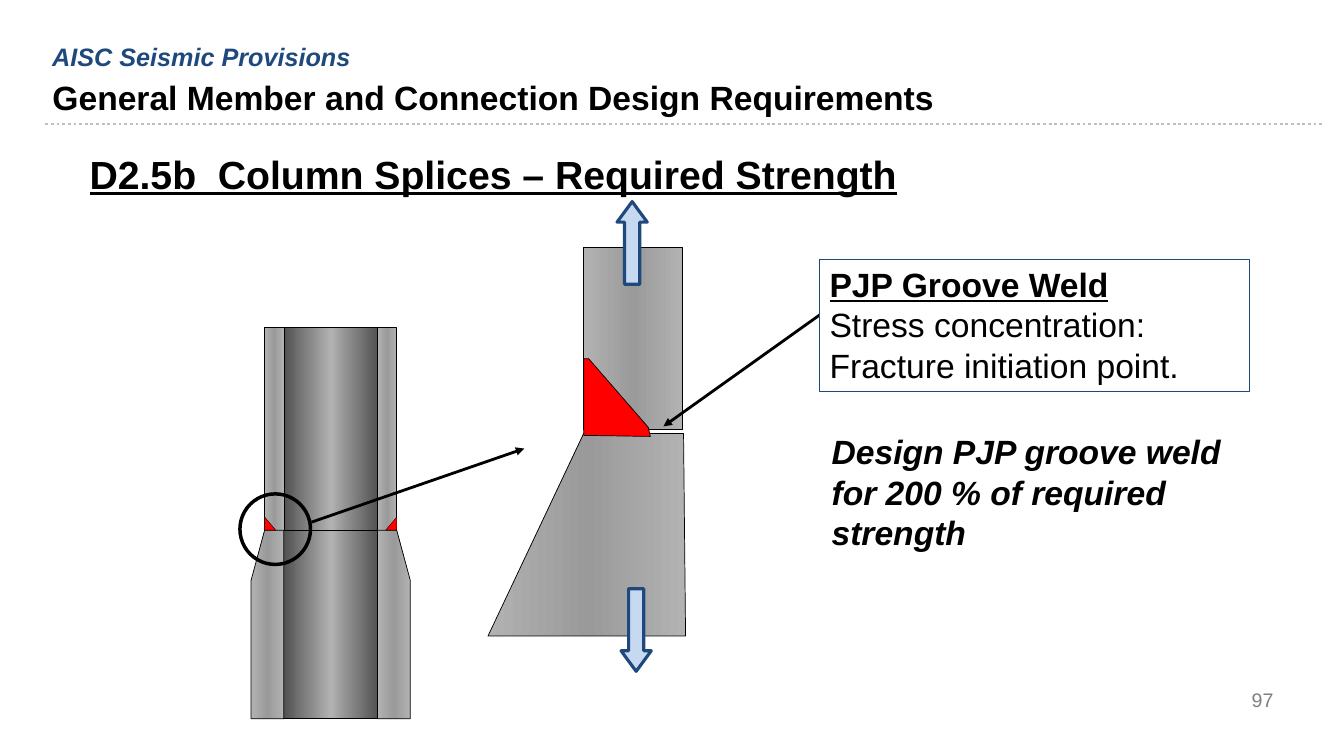
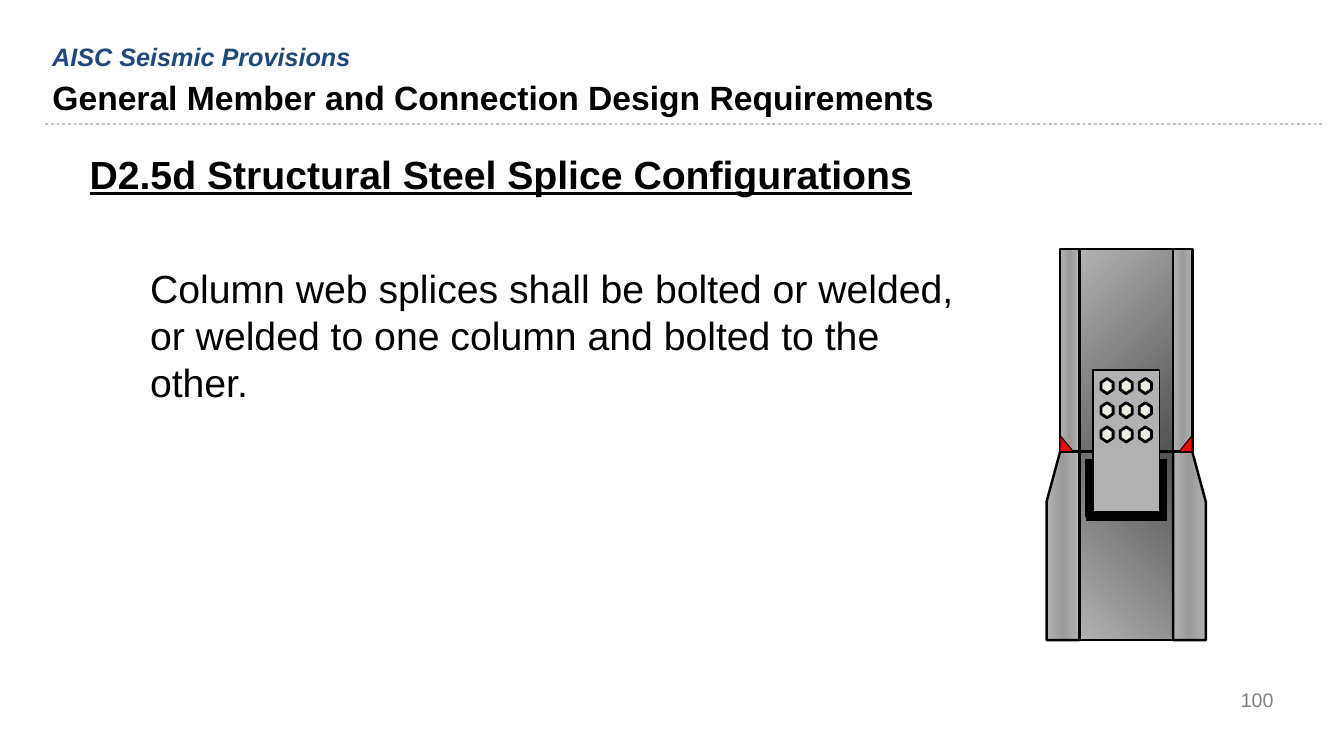
from lxml import etree
from pptx import Presentation
from pptx.dml.color import RGBColor
from pptx.enum.dml import MSO_LINE
from pptx.enum.shapes import MSO_CONNECTOR, MSO_SHAPE
from pptx.enum.text import MSO_ANCHOR, MSO_AUTO_SIZE, PP_ALIGN
from pptx.oxml.ns import qn
from pptx.util import Inches, Pt

# Theme: colours, gradients and type styles
THEME = {
    "font": "Arial",
    "black": "000000", "navy": "1F497D", "sky": "C6D9F1", "white": "FFFFFF",
    "rule": "BFBFBF", "weld": "FF0000", "plate": "B2B2B2", "bolt": "EEECE1",
    "flange": ["B2B2B2", "9A9A9A", "B2B2B2"],
    "web": ["525252", "B2B2B2", "525252"],
    "web_slant": ["B2B2B2", "525252"],
    "text": {
        "title": ("000000", {"size": Pt(24), "bold": True}),
        "kicker": ("1F497D", {"size": Pt(18), "bold": True, "italic": True}),
        "number": ("7F7F7F", {"size": Pt(14)}),
        "heading": ("000000", {"size": Pt(28), "bold": True, "underline": True}),
        "body": ("000000", {"size": Pt(28)}),
        "label": ("000000", {"size": Pt(24), "bold": True, "underline": True}),
        "note": ("000000", {"size": Pt(24)}),
        "rule": ("000000", {"size": Pt(24), "bold": True, "italic": True}),
    },
}

prs = Presentation()
prs.slide_width, prs.slide_height = Inches(13.33), Inches(7.5)
CELL = prs.slide_height / 75  # the grid has 75 rows of square cells


def write(tf, lines, align=PP_ALIGN.LEFT, anchor=MSO_ANCHOR.TOP):
    """Fill a text frame with (text, style name) paragraphs."""
    tf.word_wrap, tf.auto_size = True, MSO_AUTO_SIZE.NONE
    tf.vertical_anchor = anchor
    for i, (text, style) in enumerate(lines):
        p = tf.paragraphs[0] if i == 0 else tf.add_paragraph()
        p.alignment = align
        r = p.add_run()
        r.text = text
        color, formats = THEME["text"][style]
        r.font.name = THEME["font"]
        r.font.color.rgb = RGBColor.from_string(color)
        for name, value in formats.items():
            setattr(r.font, name, value)


def draw(s, form, at, fill=None, line="black", width=0.5, angle=0):
    """Draw a preset at (left, top, width, height), or a line or polygon through points."""
    if form == "polygon":
        points = [(round(x * CELL), round(y * CELL)) for x, y in at]
        builder = s.shapes.build_freeform(*points[0])
        builder.add_line_segments(points[1:], close=True)
        sp = builder.convert_to_shape()
    elif form == "line":
        ends = [round(v * CELL) for point in at for v in point]
        sp = s.shapes.add_connector(MSO_CONNECTOR.STRAIGHT, *ends)
    else:
        sp = s.shapes.add_shape(form, *[round(v * CELL) for v in at])
    sp.line.color.rgb = RGBColor.from_string(THEME[line])
    sp.line.width = Pt(width)
    if form == "line":
        etree.SubElement(sp._element.spPr, qn("a:effectLst"))
        return sp
    sp.shadow.inherit = False
    if fill is None:
        sp.fill.background()
    elif isinstance(THEME[fill], str):
        sp.fill.solid()
        sp.fill.fore_color.rgb = RGBColor.from_string(THEME[fill])
    else:
        colors = THEME[fill]
        sp.fill.gradient()
        sp.fill.gradient_angle = angle
        stops = sp._element.spPr.find(qn("a:gradFill")).find(qn("a:gsLst"))
        for stop in list(stops):
            stops.remove(stop)
        for i, color in enumerate(colors):
            stop = etree.SubElement(stops, qn("a:gs"), pos=str(100000 * i // (len(colors) - 1)))
            etree.SubElement(stop, qn("a:srgbClr"), val=color)
    return sp


# What differs between the slides; angles run counterclockwise
PAGES = [
    {"number": "97", "heading": "D2.5b  Column Splices – Required Strength",
     "axis": 32.8, "joint": 52.6, "web": "web", "angles": (0, 0),
     "outline": 0.5, "weld": (1.1, 1.3), "weld_line": 0.25},
    {"number": "100", "heading": "D2.5d Structural Steel Splice Configurations",
     "axis": 111.7, "joint": 44.8, "web": "web_slant", "angles": (315, 45),
     "outline": 1.75, "weld": (1.3, 1.6), "weld_line": 0.75},
]

# Column profile in cells: half widths from the axis, heights from the joint
WEB, UPPER, LOWER = 4.65, 6.55, 7.9
RISE, TAPER, DROP = 20.1, 5, 18.7

slides = []
for page in PAGES:
    s = prs.slides.add_slide(prs.slide_layouts[5])
    slides.append(s)

    # Title, dotted rule, and the text that frames every slide
    title = s.shapes.title
    title.left, title.top, title.width, title.height = [
        round(v * CELL) for v in (4.2, 7.1, 119.7, 4.4)]
    write(title.text_frame, [("General Member and Connection Design Requirements", "title")])
    rule = draw(s, "line", [(4.5, 12.3), (131.2, 12.3)], line="rule", width=2)
    rule.line.dash_style = MSO_LINE.ROUND_DOT
    frame_texts = [
        ((4.2, 3.6, 119.7, 3.1), "AISC Seismic Provisions", "kicker", PP_ALIGN.LEFT, MSO_ANCHOR.TOP),
        ((7.9, 14.4, 92.7, 5.7), page["heading"], "heading", PP_ALIGN.LEFT, MSO_ANCHOR.TOP),
        ((96.2, 67.4, 31.1, 4), page["number"], "number", PP_ALIGN.RIGHT, MSO_ANCHOR.MIDDLE),
    ]
    for at, text, style, align, anchor in frame_texts:
        box = s.shapes.add_textbox(*[round(v * CELL) for v in at])
        write(box.text_frame, [(text, style)], align, anchor)

    # Column: webs, then flanges and welds mirrored about the axis
    axis, joint, outline = page["axis"], page["joint"], page["outline"]
    for top, height, angle in zip((joint - RISE, joint), (RISE, DROP), page["angles"]):
        draw(s, MSO_SHAPE.RECTANGLE, (axis - WEB, top, 2 * WEB, height),
             page["web"], width=outline, angle=angle)
    weld_width, weld_height = page["weld"]
    upper_flange = [(WEB, -RISE), (UPPER, -RISE), (UPPER, 0), (WEB, 0)]
    lower_flange = [(WEB, 0), (UPPER, 0), (LOWER, TAPER), (LOWER, DROP), (WEB, DROP)]
    weld = [(UPPER, -weld_height), (UPPER - weld_width, 0), (UPPER, 0)]
    for side in (-1, 1):
        for part, fill, width in [(upper_flange, "flange", outline),
                                  (lower_flange, "flange", outline),
                                  (weld, "weld", page["weld_line"])]:
            draw(s, "polygon", [(axis + side * x, joint + y) for x, y in part], fill, width=width)

# Slide 1: enlarged splice
s = slides[0]
draw(s, MSO_SHAPE.OVAL, (23.8, 49, 7, 7), width=2.5)
draw(s, MSO_SHAPE.RECTANGLE, (57.9, 24.5, 9.8, 18.1), "flange")
draw(s, "polygon", [(67.8, 43), (68, 63.1), (48.4, 63.1), (57.9, 43)], "flange")
draw(s, "polygon", [(57.9, 35.6), (57.9, 43.2), (64.5, 43.3), (64.3, 42.4), (58.4, 35.6)], "weld")

# Slide 1: pointers and tension arrows
for ends in ([(30.9, 51.8), (52, 44.5)], [(81.5, 31.1), (65.8, 42.3)]):
    pointer = draw(s, "line", ends, width=2)
    etree.SubElement(pointer.line._get_or_add_ln(), qn("a:tailEnd"), type="triangle")
for form, left, top in [(MSO_SHAPE.UP_ARROW, 61.2, 20), (MSO_SHAPE.DOWN_ARROW, 61.6, 58.4)]:
    arrow = draw(s, form, (left, top, 3, 8.2), "sky", "navy", 2.25)
    arrow.adjustments[0], arrow.adjustments[1] = 0.5, 0.68

# Slide 1: callout and design rule
callout = draw(s, MSO_SHAPE.RECTANGLE, (81.3, 25.7, 42.6, 13.1), "white", "navy", 0.75)
write(callout.text_frame, [("PJP Groove Weld", "label"),
                           ("Stress concentration: Fracture initiation point.", "note")])
box = s.shapes.add_textbox(*[round(v * CELL) for v in (81.5, 42.3, 40.7, 13.1)])
write(box.text_frame, [("Design PJP groove weld for 200 % of required strength", "rule")])

# Slide 2: body text
s = slides[1]
box = s.shapes.add_textbox(*[round(v * CELL) for v in (13.9, 25.7, 85, 15.1)])
write(box.text_frame, [("Column web splices shall be bolted or welded, or welded to one column "
                        "and bolted to the other.", "body")])

# Slide 2: splice plate, its fillet welds and a 3 by 3 group of bolts
draw(s, MSO_SHAPE.RECTANGLE, (axis - 3.3, 36.7, 6.6, 14.1), "plate", width=1.25)
for start, end in [((-3.65, 45.5), (-3.65, 51.3)), ((3.65, 45.5), (3.65, 51.3)),
                   ((-4, 51.3), (4, 51.3))]:
    draw(s, "line", [(axis + x, y) for x, y in (start, end)], width=6)
hexagon = [(0, -0.75), (0.6, -0.35), (0.6, 0.35), (0, 0.75), (-0.6, 0.35), (-0.6, -0.35)]
for row in range(3):
    for col in range(3):
        x, y = axis + 1.9 * (col - 1), 38.3 + 2.4 * row
        draw(s, "polygon", [(x + dx, y + dy) for dx, dy in hexagon], "bolt", width=2)

prs.save("out.pptx")
